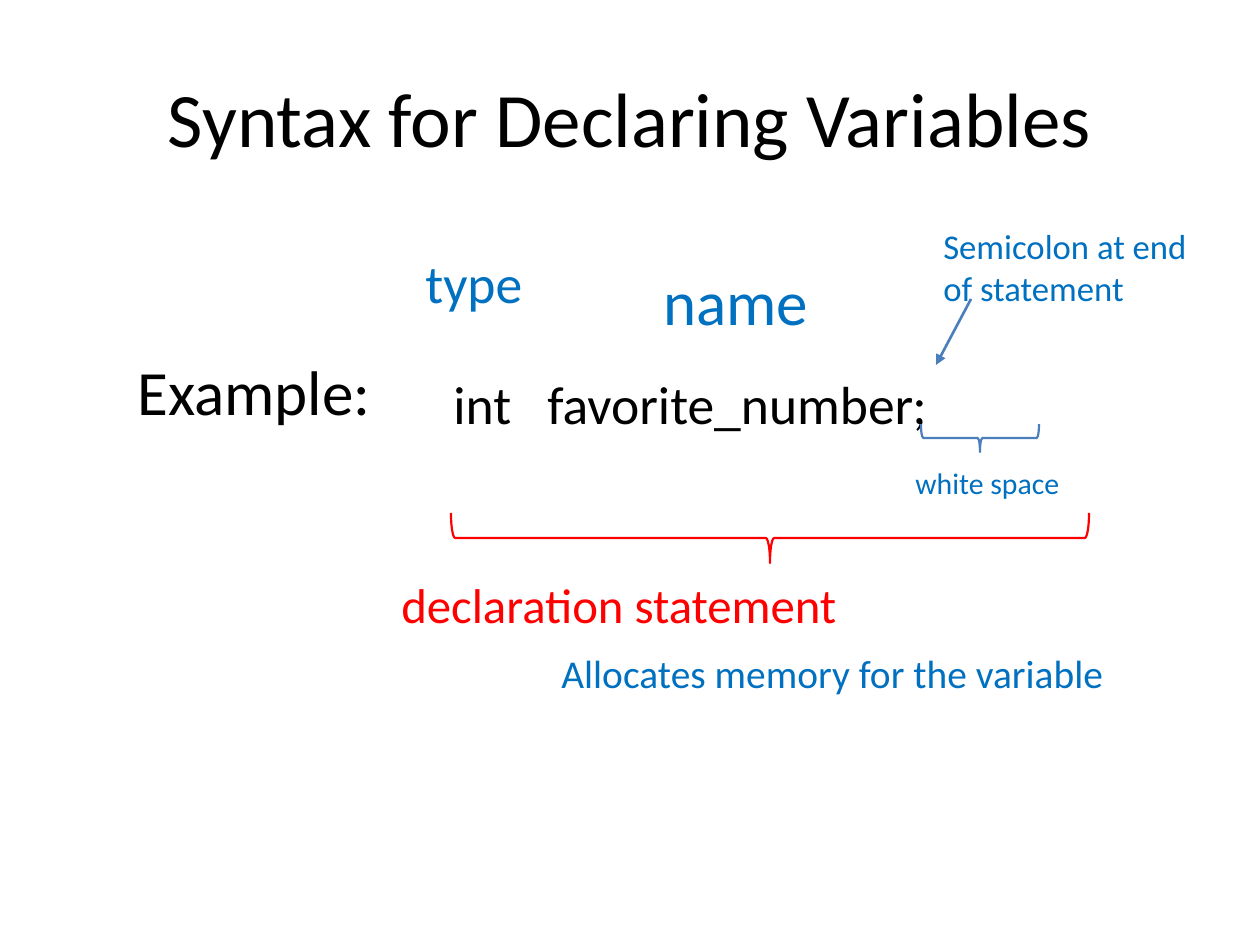
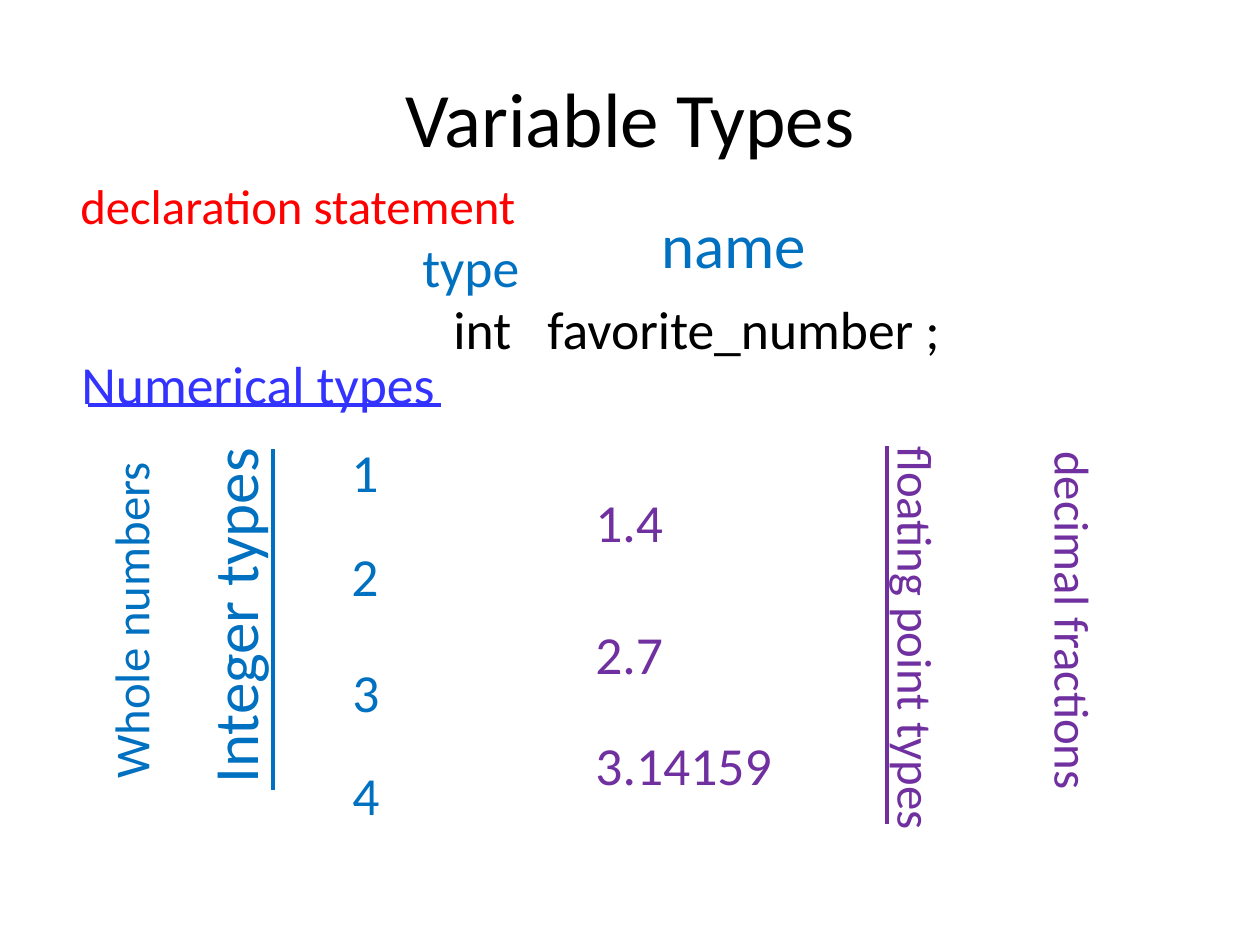
from lxml.etree import SubElement
from pptx import Presentation
from pptx.dml.color import RGBColor
from pptx.enum.shapes import MSO_CONNECTOR as Connector, MSO_SHAPE as Shape
from pptx.enum.text import MSO_ANCHOR as Anchor, PP_ALIGN as Align
from pptx.oxml.ns import qn
from pptx.util import Emu, Inches, Pt

FONT = "Calibri"
BLACK = RGBColor(0x00, 0x00, 0x00)
BLUE = RGBColor(0x00, 0x70, 0xC0)
STEEL = RGBColor(0x4B, 0x7E, 0xBC)
RED = RGBColor(0xFF, 0x00, 0x00)
INDIGO = RGBColor(0x33, 0x33, 0xFF)
PURPLE = RGBColor(0x70, 0x30, 0xA0)
SCALE = 914400 / 126
TITLE_ONLY = 5


def px(*lengths):
    return [Emu(round(length * SCALE)) for length in lengths]


def add_text(page, text, at=None, size=30.6, color=BLUE, align=Align.LEFT, vert=None, tab=None):
    if at is None:
        box = page.shapes.title
        box.left, box.top, box.width, box.height = px(63, 38, 1134, 157)
        box.text_frame.vertical_anchor = Anchor.MIDDLE
    else:
        box = page.shapes.add_textbox(*px(*at))
    frame = box.text_frame
    frame.word_wrap = True
    para = frame.paragraphs[0]
    para.alignment = align
    span = para.add_run()
    span.text = text
    span.font.name, span.font.size = FONT, Pt(size)
    span.font.color.rgb = color
    properties = para._p.get_or_add_pPr()
    if at is not None:
        before = SubElement(properties, qn("a:spcBef"))
        SubElement(before, qn("a:spcPct"), val="20000")
    if tab:
        tabs = SubElement(properties, qn("a:tabLst"))
        SubElement(tabs, qn("a:tab"), pos=str(px(tab)[0]), algn="l")
    if vert:
        body = frame._txBody.bodyPr
        body.set("vert", vert)
        for side, inset in (("lIns", 0.1), ("tIns", 0.05), ("rIns", 0.1), ("bIns", 0.05)):
            body.set(side, str(Inches(inset)))


deck = Presentation()
deck.slide_width, deck.slide_height = px(1260, 945)
layout = deck.slide_layouts[TITLE_ONLY]
syntax_page = deck.slides.add_slide(layout)
types_page = deck.slides.add_slide(layout)

for page, title in ((syntax_page, "Syntax for Declaring Variables"), (types_page, "Variable Types")):
    add_text(page, title, size=44, color=BLACK, align=Align.CENTER)

for page, code, code_top, type_at, name_at, statement_at in (
    (syntax_page, "int\tfavorite_number", 365, (413, 244), (651, 256), (389, 568)),
    (types_page, "int\tfavorite_number ;", 290, (410, 228), (649, 199), (68, 169)),
):
    add_text(page, code, (441, code_top, 567, 67), color=BLACK, tab=94)
    add_text(page, "type", (*type_at, 136, 67))
    add_text(page, "name", (*name_at, 179, 84), size=36)
    add_text(page, "declaration statement", (*statement_at, 503, 67), size=27.9, color=RED)

add_text(syntax_page, "Example:", (125, 346, 357, 94), size=36, color=BLACK)
add_text(syntax_page, ";", (694, 365, 245, 67), color=BLACK, align=Align.RIGHT)
for note, at, size in (
    ("Semicolon at end of statement", (931, 219, 301, 84), 19.8),
    ("white space", (903, 459, 185, 54), 17),
    ("Allocates memory for the variable", (549, 643, 606, 54), 22.5),
):
    add_text(syntax_page, note, at, size=size)

for at, color in (((966, 379, 28, 118), STEEL), ((745, 219, 50, 638), RED)):
    brace = syntax_page.shapes.add_shape(Shape.LEFT_BRACE, *px(*at))
    brace.rotation = 270
    brace.shadow.inherit = False
    brace.fill.background()
    brace.line.color.rgb, brace.line.width = color, Pt(1.25)

add_text(types_page, "Numerical types", (69, 345, 459, 67), color=INDIGO)
for number, left, top in (("1", 339, 433), ("2", 339, 537), ("3", 340, 653), ("4", 340, 756)):
    add_text(types_page, number, (left, top, 73, 67))
for number, top, width in (("1.4", 483, 116), ("2.7", 615, 116), ("3.14159", 726, 244)):
    add_text(types_page, number, (583, top, width, 67), color=PURPLE)
for label, at, size, color, vert in (
    ("Integer types", (183, 424, 116, 366), 36, BLUE, "vert270"),
    ("Whole numbers", (88, 435, 87, 350), 27.9, BLUE, "vert270"),
    ("floating point types", (881, 440, 78, 417), 27.9, PURPLE, "vert"),
    ("decimal fractions", (1038, 445, 78, 401), 27.9, PURPLE, "vert"),
):
    add_text(types_page, label, at, size=size, color=color, vert=vert)

for page, ends, color, width, arrow in (
    (syntax_page, (971, 299, 936, 365), STEEL, 1.5, True),
    (types_page, (88, 405, 441, 405), INDIGO, 2.25, False),
    (types_page, (273, 790, 273, 449), BLUE, 2.25, False),
    (types_page, (887, 824, 887, 446), PURPLE, 2.25, False),
):
    line = page.shapes.add_connector(Connector.STRAIGHT, *px(*ends))
    line.line.color.rgb, line.line.width = color, Pt(width)
    if arrow:
        SubElement(line.line._get_or_add_ln(), qn("a:tailEnd"), type="triangle")
    SubElement(line._element.spPr, qn("a:effectLst"))

deck.save("out.pptx")
